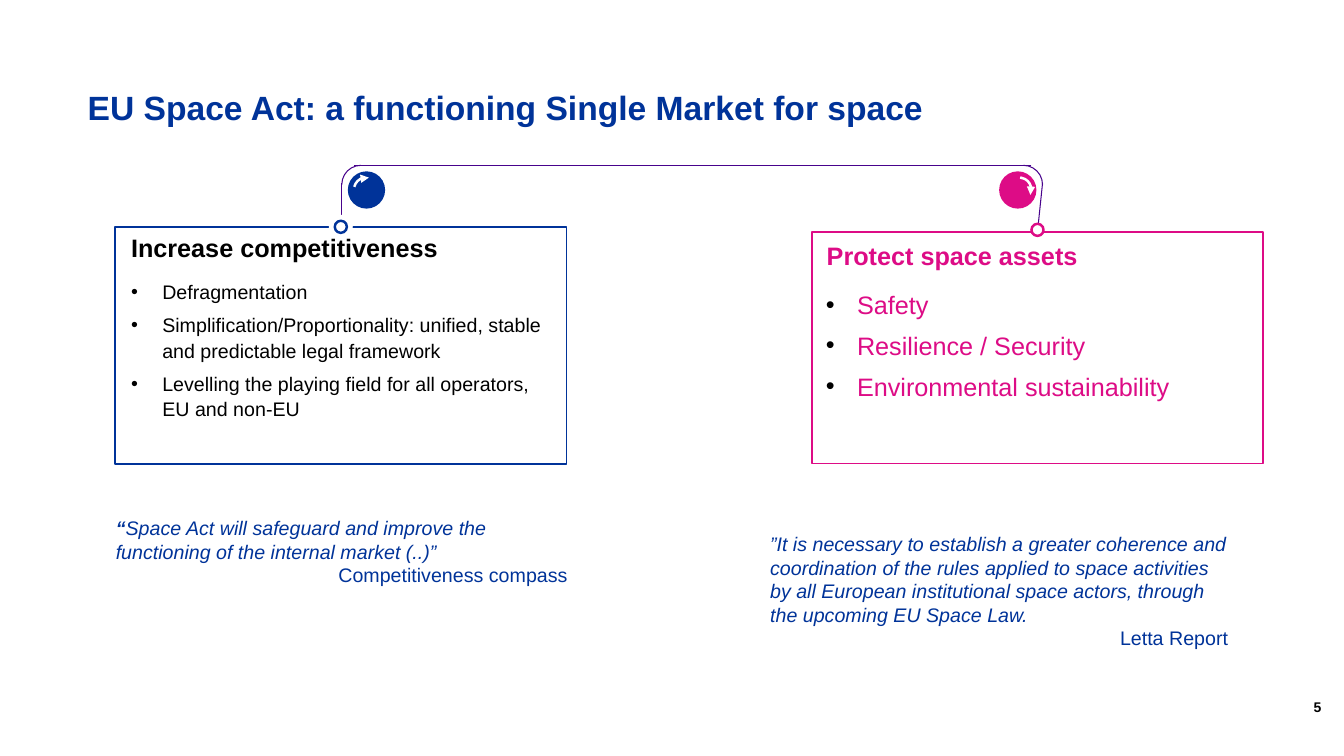
from lxml import etree
from pptx import Presentation
from pptx.dml.color import RGBColor
from pptx.enum import shapes, text
from pptx.oxml import ns
from pptx.util import Inches, Pt

BLUE = RGBColor(0x00, 0x33, 0x99)
PINK = RGBColor(0xDD, 0x0C, 0x86)
PURPLE = RGBColor(0x48, 0x03, 0x8C)
WHITE = RGBColor(0xFF, 0xFF, 0xFF)
BLACK = RGBColor(0x00, 0x00, 0x00)
FONT = "Arial"
SHAPE = shapes.MSO_SHAPE


def add_child(parent, tag, **attrs):
    return etree.SubElement(parent, ns.qn(tag), attrs)


def style_run(r, size, color, bold=False, italic=False):
    r.font.name, r.font.size = FONT, Pt(size)
    r.font.bold, r.font.italic = bold, italic
    r.font.color.rgb = color


def add_shape(parent, kind, box, fill=None, line=None, width=1.25):
    sp = parent.shapes.add_shape(kind, *map(Inches, box))
    sp.shadow.inherit = False
    if fill is None:
        sp.fill.background()
    else:
        sp.fill.solid()
        sp.fill.fore_color.rgb = fill
    if line is None:
        sp.line.fill.background()
    else:
        sp.line.color.rgb = line
        sp.line.width = Pt(width)
    return sp


def add_line(slide, *ends):
    line = slide.shapes.add_connector(
        shapes.MSO_CONNECTOR.STRAIGHT, *map(Inches, ends))
    line.line.color.rgb = PURPLE
    line.line.width = Pt(0.75)
    add_child(line._element.spPr, "a:effectLst")


def add_corner(slide, left, flip=False):
    arc = add_shape(slide, SHAPE.ARC, (left, 1.64, 0.38, 0.38), line=PURPLE, width=0.75)
    if flip:
        arc._element.spPr.find(ns.qn("a:xfrm")).set("flipH", "1")


def add_dial(slide, left, arc_left, color, angles):
    """Round badge with a curved white arrow."""
    group = slide.shapes.add_group_shape()
    add_shape(group, SHAPE.OVAL, (left, 1.7, 0.37, 0.37), color)
    arc = add_shape(group, SHAPE.ARC, (arc_left, 1.76, 0.25, 0.25), line=WHITE, width=1.75)
    arc.adjustments[0], arc.adjustments[1] = angles
    add_child(arc.line._get_or_add_ln(), "a:tailEnd", type="triangle")


def add_ring(slide, left, top, color):
    add_shape(slide, SHAPE.OVAL, (left, top, 0.12, 0.12), WHITE, color, 1.75)


def add_textbox(slide, box, inset=True):
    tf = slide.shapes.add_textbox(*map(Inches, box)).text_frame
    tf.word_wrap = True
    if not inset:
        tf.margin_left = tf.margin_right = tf.margin_top = tf.margin_bottom = 0
    return tf


def add_heading(slide, box, heading, color, spacing):
    p = add_textbox(slide, box, inset=False).paragraphs[0]
    p.text = heading
    p.line_spacing = spacing
    style_run(p.runs[0], 18, color, bold=True)


def add_bullets(slide, box, items, size, color):
    tf = add_textbox(slide, box, inset=False)
    tf.text = "\n".join(items)
    for p in tf.paragraphs:
        pPr = p._p.get_or_add_pPr()
        pPr.set("marL", str(Inches(0.31)))
        pPr.set("indent", str(-Inches(0.31)))
        p.line_spacing, p.space_after = 1.07, Pt(6)
        add_child(add_child(pPr, "a:buClr"), "a:srgbClr", val=str(BLACK))
        add_child(pPr, "a:buFont", typeface=FONT)
        add_child(pPr, "a:buChar", char="•")
        style_run(p.runs[0], size, color)


def add_quote(slide, box, quote, source, bold_mark=""):
    tf = add_textbox(slide, box)
    p = tf.paragraphs[0]
    for part, bold in ((bold_mark, True), (quote, False)):
        if part:
            r = p.add_run()
            r.text = part
            style_run(r, 14, BLUE, bold, italic=True)
    p = tf.add_paragraph()
    p.text = source
    p.alignment = text.PP_ALIGN.RIGHT
    style_run(p.runs[0], 14, BLUE)


def set_title(slide, title):
    sp = slide.shapes.title
    sp.left, sp.top, sp.width, sp.height = map(Inches, (0.77, 0.64, 11.65, 0.89))
    tf = sp.text_frame
    tf.text = title
    tf.vertical_anchor = text.MSO_ANCHOR.MIDDLE
    p = tf.paragraphs[0]
    p.alignment, p.line_spacing = text.PP_ALIGN.LEFT, 0.9
    style_run(p.runs[0], 24, BLUE, bold=True)


def add_page_number(slide, number):
    tf = add_textbox(slide, (12.93, 6.75, 0.41, 0.4))
    tf.text = number
    tf.vertical_anchor = text.MSO_ANCHOR.BOTTOM
    style_run(tf.paragraphs[0].runs[0], 10, BLACK, bold=True)


def main():
    prs = Presentation()
    prs.slide_width, prs.slide_height = Inches(13.33), Inches(7.5)
    slide = prs.slides.add_slide(prs.slide_layouts[5])
    set_title(slide, "EU Space Act: a functioning Single Market for space")
    add_page_number(slide, "5")

    # Bracket joining the two panels
    add_line(slide, 10.34, 1.82, 10.29, 2.3)
    add_line(slide, 10.23, 1.64, 3.51, 1.64)
    add_line(slide, 3.39, 1.82, 3.39, 2.26)
    add_corner(slide, 3.39, flip=True)
    add_corner(slide, 9.96)

    # Left panel
    add_shape(slide, SHAPE.RECTANGLE, (1.14, 2.25, 4.48, 2.35), line=BLUE)
    add_shape(slide, SHAPE.OVAL, (3.27, 2.14, 0.22, 0.22), WHITE, WHITE)
    add_ring(slide, 3.32, 2.19, BLUE)
    add_dial(slide, 3.45, 3.51, BLUE, (116.61, 168.76))
    add_heading(slide, (1.3, 2.31, 4.37, 0.3), "Increase competitiveness", BLACK, 1.0)
    add_bullets(slide, (1.3, 2.76, 4.18, 1.74), [
        "Defragmentation",
        "Simplification/Proportionality: unified, stable and predictable legal framework",
        "Levelling the playing field for all operators, EU and non-EU",
    ], 14, BLACK)

    # Right panel
    add_shape(slide, SHAPE.RECTANGLE, (8.05, 2.3, 4.48, 2.3), line=PINK)
    add_ring(slide, 10.23, 2.22, PINK)
    add_dial(slide, 9.91, 9.98, PINK, (165.73, 13.78))
    add_heading(slide, (8.2, 2.42, 4.2, 0.27), "Protect space assets", PINK, 0.9)
    add_bullets(slide, (8.19, 2.85, 4.25, 1.12), [
        "Safety", "Resilience / Security", "Environmental sustainability",
    ], 18, PINK)

    # Quotes
    add_quote(slide, (1.05, 5.07, 4.68, 0.81),
              "Space Act will safeguard and improve the functioning of the "
              "internal market (..)”", "Competitiveness compass", bold_mark="“")
    add_quote(slide, (7.54, 5.23, 4.74, 1.28),
              "”It is necessary to establish a greater coherence and coordination "
              "of the rules applied to space activities by all European institutional "
              "space actors, through the upcoming EU Space Law.", "Letta Report")

    prs.save("out.pptx")


if __name__ == "__main__":
    main()
